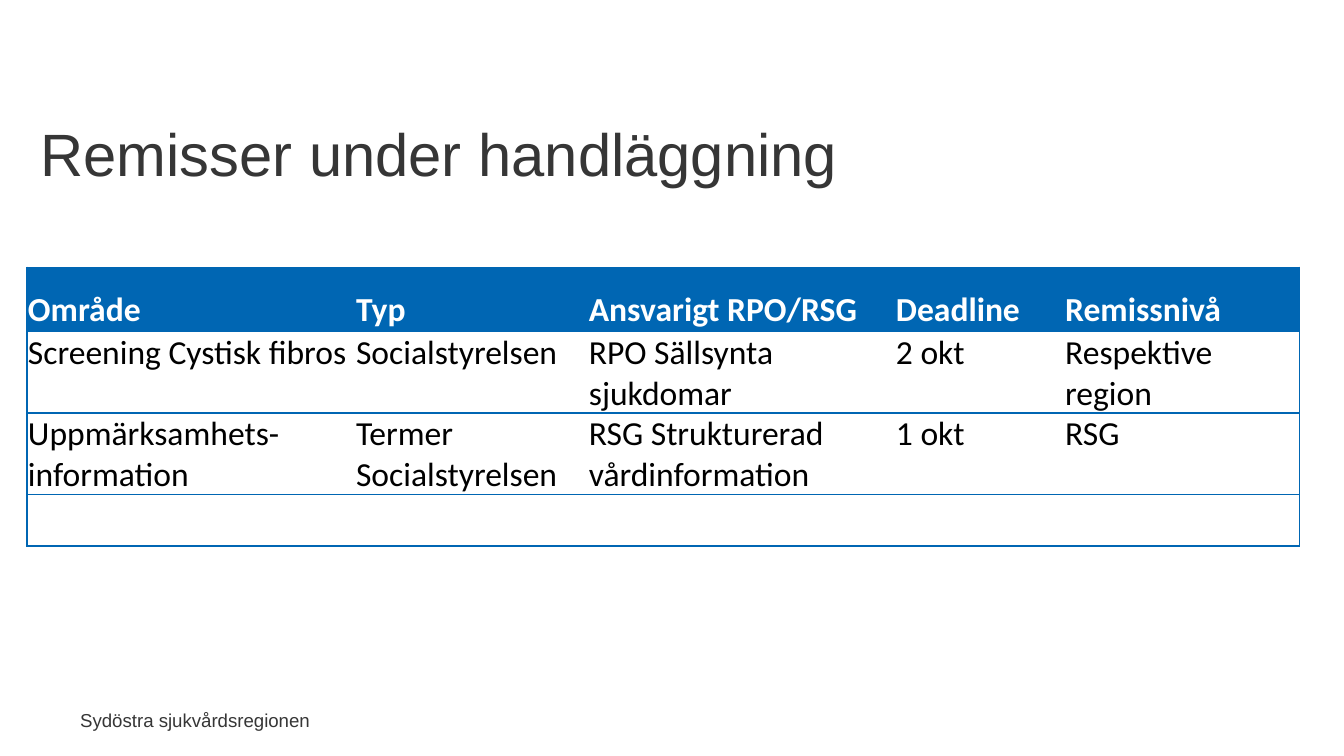
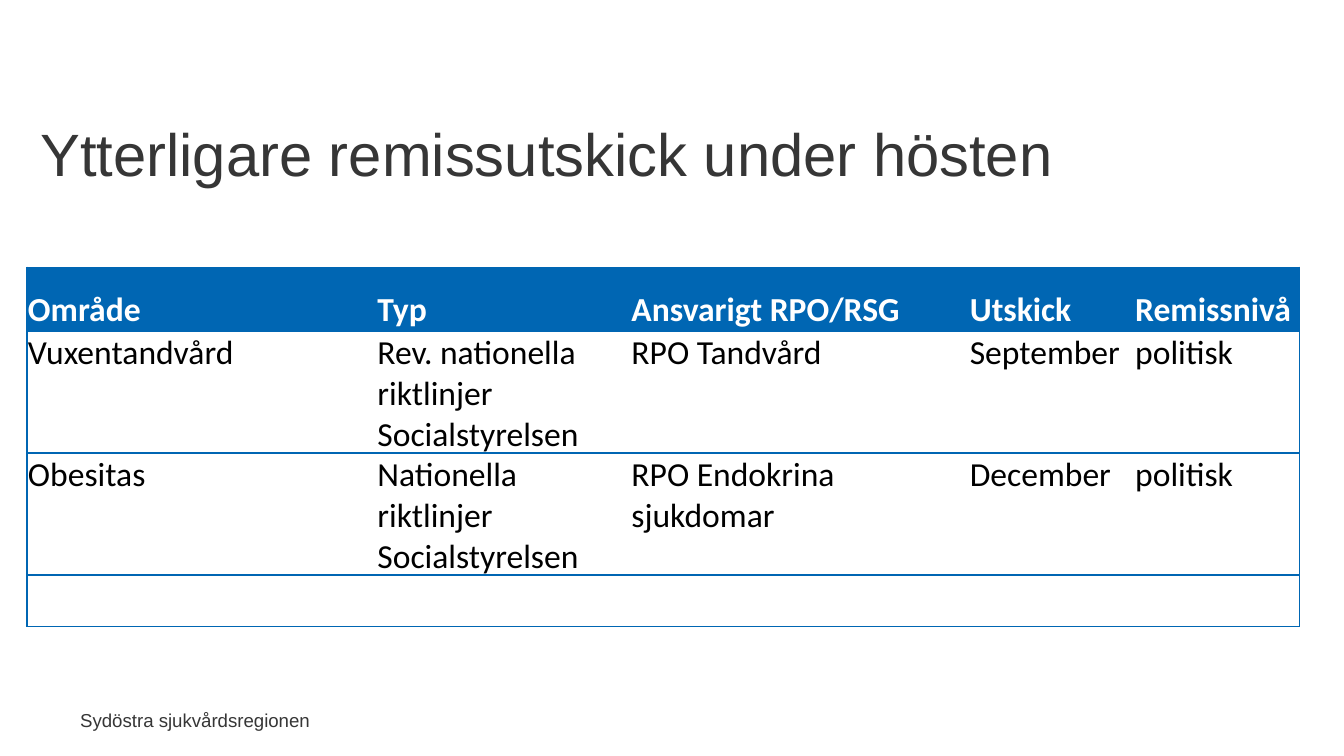
from lxml.etree import SubElement
from pptx import Presentation
from pptx.dml.color import RGBColor
from pptx.enum.text import MSO_ANCHOR as Anchor, MSO_AUTO_SIZE as AutoSize, PP_ALIGN as Align
from pptx.oxml.ns import qn
from pptx.util import Pt

BLUE = RGBColor(0x00, 0x66, 0xB3)
WHITE = RGBColor(0xFF, 0xFF, 0xFF)
BLACK = RGBColor(0x00, 0x00, 0x00)
GREY = RGBColor(0x36, 0x36, 0x36)
TITLE_ONLY = 5
FOOTER = "Sydöstra sjukvårdsregionen"
LEFT = 14.4
HEADER_HEIGHT = 34
ROW_HEIGHT = 27.5


def set_border(cell, side, color=None):
    """Draw one cell edge (L, R, T or B), or hide it when no colour is given."""
    line = SubElement(cell._tc.get_or_add_tcPr(), qn(f"a:ln{side}"), w=str(Pt(1)))
    if color is None:
        SubElement(line, qn("a:noFill"))
    else:
        fill = SubElement(line, qn("a:solidFill"))
        SubElement(fill, qn("a:srgbClr"), val=str(color))


class RegionDeck:
    """Holds the shared style and the slide being built."""

    def __init__(self):
        self.deck = Presentation()
        self.deck.slide_width, self.deck.slide_height = Pt(720), Pt(405)
        self.page = None

    def new_page(self, title):
        self.page = self.deck.slides.add_slide(self.deck.slide_layouts[TITLE_ONLY])
        self.add_title(title)
        self.add_footer()

    def set_text(self, frame, text, font, size, color, bold=False, align=Align.LEFT):
        frame.text = text
        for para in frame.paragraphs:
            para.alignment = align
            for span in para.runs:
                span.font.name, span.font.size = font, Pt(size)
                span.font.bold, span.font.color.rgb = bold, color

    def add_title(self, text):
        box = self.page.shapes.title
        box.left, box.top, box.width, box.height = Pt(LEFT), Pt(38), Pt(612), Pt(87)
        box.text_frame.vertical_anchor = Anchor.MIDDLE
        self.set_text(box.text_frame, text, "Arial", 32, GREY)

    def add_footer(self):
        box = self.page.shapes.add_textbox(Pt(34.5), Pt(376), Pt(138.5), Pt(19.4))
        box.text_frame.word_wrap = False
        box.text_frame.auto_size = AutoSize.SHAPE_TO_FIT_TEXT
        self.set_text(box.text_frame, FOOTER, "Arial", 10, GREY, align=Align.RIGHT)

    def add_table(self, widths, rows):
        """Add a table with a blue header row and an empty last row."""
        rows = rows + [[""] * len(widths)]
        height = HEADER_HEIGHT + ROW_HEIGHT * (len(rows) - 1)
        table = self.page.shapes.add_table(
            len(rows), len(widths), Pt(LEFT), Pt(143.3), Pt(sum(widths)), Pt(height)).table
        table.horz_banding = False
        for column, width in zip(table.columns, widths):
            column.width = Pt(width)
        for index, texts in enumerate(rows):
            table.rows[index].height = Pt(ROW_HEIGHT if index else HEADER_HEIGHT)
            for position, text in enumerate(texts):
                first, last = position == 0, position == len(widths) - 1
                self.fill_cell(table.cell(index, position), text, index == 0, first, last)

    def fill_cell(self, cell, text, header, first, last):
        set_border(cell, "L", BLUE if first else None)
        set_border(cell, "R", BLUE if last else None)
        set_border(cell, "T", BLUE)
        set_border(cell, "B", BLUE)
        cell.fill.solid()
        cell.fill.fore_color.rgb = BLUE if header else WHITE
        cell.margin_left = cell.margin_right = cell.margin_top = Pt(0.6)
        cell.margin_bottom = Pt(0)
        cell.vertical_anchor = Anchor.BOTTOM if header else Anchor.TOP
        self.set_text(cell.text_frame, text, "Calibri", 18, WHITE if header else BLACK, header)


def main():
    region = RegionDeck()

    region.new_page("Remisser under handläggning")
    region.add_table([175.8, 124.7, 164.5, 90.7, 126.1], [
        ["Område", "Typ", "Ansvarigt RPO/RSG", "Deadline", "Remissnivå"],
        ["Screening Cystisk fibros", "Socialstyrelsen", "RPO Sällsynta sjukdomar",
         "2 okt", "Respektive region"],
        ["Uppmärksamhets-information", "Termer\vSocialstyrelsen",
         "RSG Strukturerad vårdinformation", "1 okt", "RSG"],
    ])

    region.new_page("Ytterligare remissutskick under hösten")
    region.add_table([187.2, 136.1, 181.3, 88.6, 88.6], [
        ["Område", "Typ", "Ansvarigt RPO/RSG", "Utskick", "Remissnivå"],
        ["Vuxentandvård", "Rev. nationella riktlinjer Socialstyrelsen", "RPO Tandvård",
         "September", "politisk"],
        ["Obesitas", "Nationella riktlinjer Socialstyrelsen", "RPO Endokrina sjukdomar",
         "December", "politisk"],
    ])

    region.deck.save("out.pptx")


if __name__ == "__main__":
    main()
